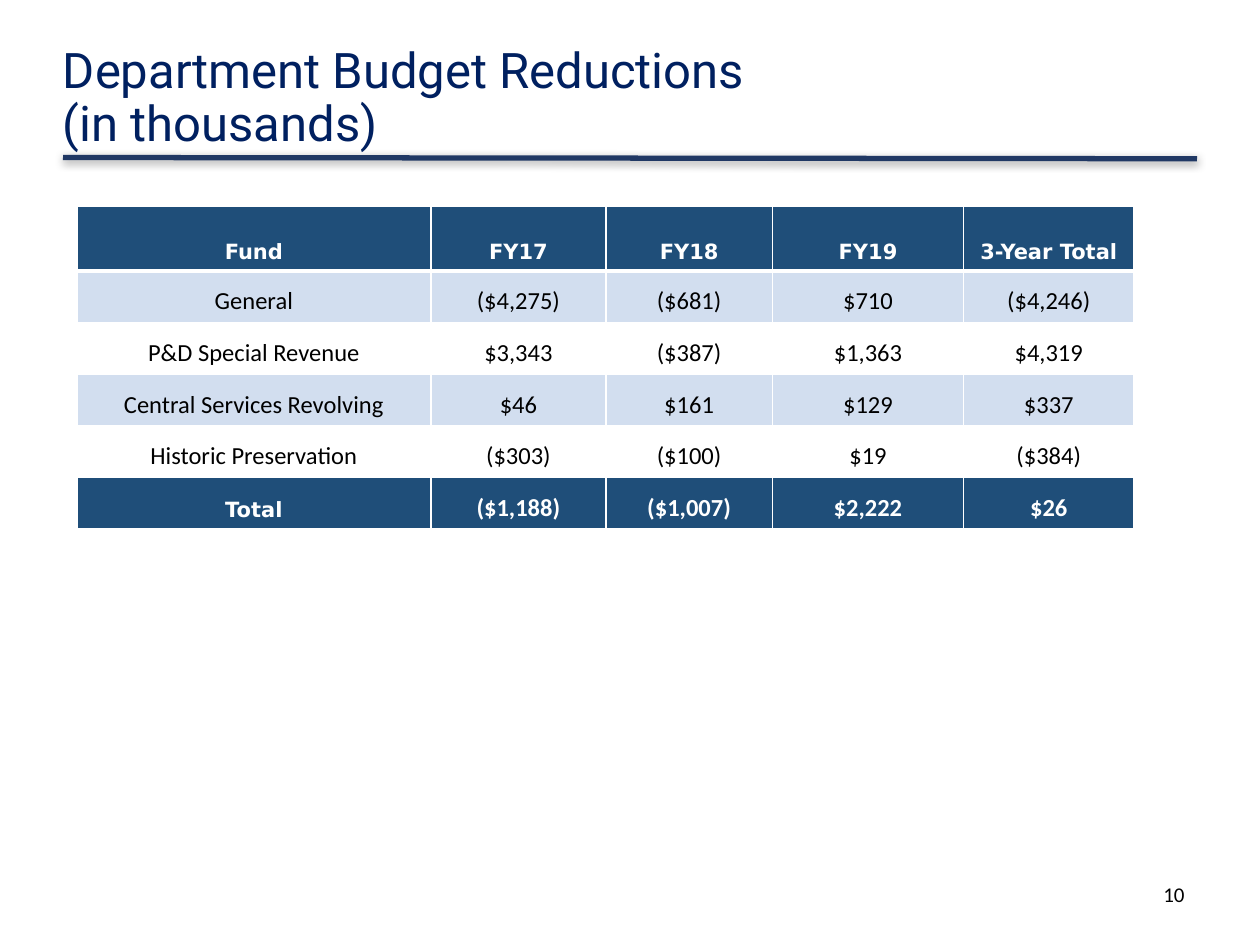
from lxml.etree import SubElement
from pptx import Presentation
from pptx.dml.color import RGBColor
from pptx.enum.shapes import MSO_CONNECTOR
from pptx.enum.text import MSO_ANCHOR, PP_ALIGN
from pptx.oxml.ns import qn
from pptx.util import Pt

PX = 9144  # EMU per px, 100 px to the inch

WHITE = RGBColor(0xFF, 0xFF, 0xFF)
BLACK = RGBColor(0x00, 0x00, 0x00)
NAVY = RGBColor(0x00, 0x20, 0x60)
RULE_BLUE = RGBColor(0x20, 0x38, 0x64)
HEADER_BLUE = RGBColor(0x1F, 0x4E, 0x79)
BAND_BLUE = RGBColor(0xD2, 0xDE, 0xEF)

COLUMN_WIDTHS = [281, 139, 132, 152, 135]
HEADER_HEIGHT, ROW_HEIGHT = 51, 41
BUDGET = [
    ["Fund", "FY17", "FY18", "FY19", "3-Year Total"],
    ["General", "($4,275)", "($681)", "$710", "($4,246)"],
    ["P&D Special Revenue", "$3,343", "($387)", "$1,363", "$4,319"],
    ["Central Services Revolving", "$46", "$161", "$129", "$337"],
    ["Historic Preservation", "($303)", "($100)", "$19", "($384)"],
    ["Total", "($1,188)", "($1,007)", "$2,222", "$26"],
]


def scaled(*lengths):
    return [length * PX for length in lengths]


def write_text(frame, text, *, size, font="Calibri", color=BLACK, bold=False,
               align=PP_ALIGN.LEFT, spacing=None):
    para = frame.paragraphs[0]
    para.alignment = align
    if spacing:
        para.line_spacing = spacing
    for number, line in enumerate(text.split("\n")):
        if number:
            para.add_line_break()
        span = para.add_run()
        span.text = line
        span.font.name = font
        span.font.size = Pt(size)
        span.font.bold = bold
        span.font.color.rgb = color


def add_title(page, left, top, width, height):
    box = page.shapes.add_textbox(*scaled(left, top, width, height))
    frame = box.text_frame
    frame.word_wrap = True
    frame.vertical_anchor = MSO_ANCHOR.MIDDLE
    frame.margin_left = frame.margin_right = 0
    frame.margin_top = frame.margin_bottom = 0
    write_text(frame, "Department Budget Reductions\n(in thousands)",
               size=28, font="Roboto", color=NAVY, spacing=0.9)


def add_title_rule(page, left, top, width, height):
    rule = page.shapes.add_connector(
        MSO_CONNECTOR.STRAIGHT, *scaled(left, top, left + width, top + height))
    rule.line.color.rgb = RULE_BLUE
    rule.line.width = Pt(3)
    # Soft shadow straight below the rule
    effects = SubElement(rule._element.spPr, qn("a:effectLst"))
    shadow = SubElement(effects, qn("a:outerShdw"), blurRad=str(Pt(5)),
                        dist=str(Pt(1.6)), dir="5400000", rotWithShape="0")
    shade = SubElement(shadow, qn("a:srgbClr"), val=str(BLACK))
    SubElement(shade, qn("a:alpha"), val="38000")


def set_borders(cell, bottom_width):
    properties = cell._tc.get_or_add_tcPr()
    for side, width in (("L", 1), ("R", 1), ("T", 1), ("B", bottom_width)):
        edge = SubElement(properties, qn(f"a:ln{side}"), w=str(Pt(width)))
        fill = SubElement(edge, qn("a:solidFill"))
        SubElement(fill, qn("a:srgbClr"), val=str(WHITE))


def add_budget_table(page, left, top):
    heights = [HEADER_HEIGHT] + [ROW_HEIGHT] * (len(BUDGET) - 1)
    table = page.shapes.add_table(
        len(BUDGET), len(COLUMN_WIDTHS),
        *scaled(left, top, sum(COLUMN_WIDTHS), sum(heights))).table
    table.first_row = table.horz_banding = False
    for column, width in zip(table.columns, COLUMN_WIDTHS):
        column.width = width * PX

    last = len(BUDGET) - 1
    for r, values in enumerate(BUDGET):
        table.rows[r].height = heights[r] * PX
        dark = r in (0, last)
        fill = HEADER_BLUE if dark else BAND_BLUE if r % 2 else WHITE
        for c, value in enumerate(values):
            cell = table.cell(r, c)
            label = r == 0 or (r == last and c == 0)
            set_borders(cell, 3 if r == 0 else 1)
            cell.fill.solid()
            cell.fill.fore_color.rgb = fill
            cell.vertical_anchor = MSO_ANCHOR.BOTTOM
            write_text(cell.text_frame, value, size=12 if label else 14,
                       font="DejaVu Sans" if label else "Calibri",
                       color=WHITE if dark else BLACK, bold=dark,
                       align=PP_ALIGN.CENTER)


def add_page_number(page, left, top, width, height):
    box = page.shapes.add_textbox(*scaled(left, top, width, height))
    box.text_frame.word_wrap = True
    write_text(box.text_frame, "10", size=12, align=PP_ALIGN.RIGHT)


def main():
    deck = Presentation()
    deck.slide_width, deck.slide_height = scaled(1000, 750)
    page = deck.slides.add_slide(deck.slide_layouts[6])
    add_title_rule(page, 50, 125, 900, 1)
    add_title(page, 50, 33, 686, 92)
    add_page_number(page, 717, 695, 233, 40)
    add_budget_table(page, 61, 164)
    deck.save("out.pptx")


if __name__ == "__main__":
    main()
